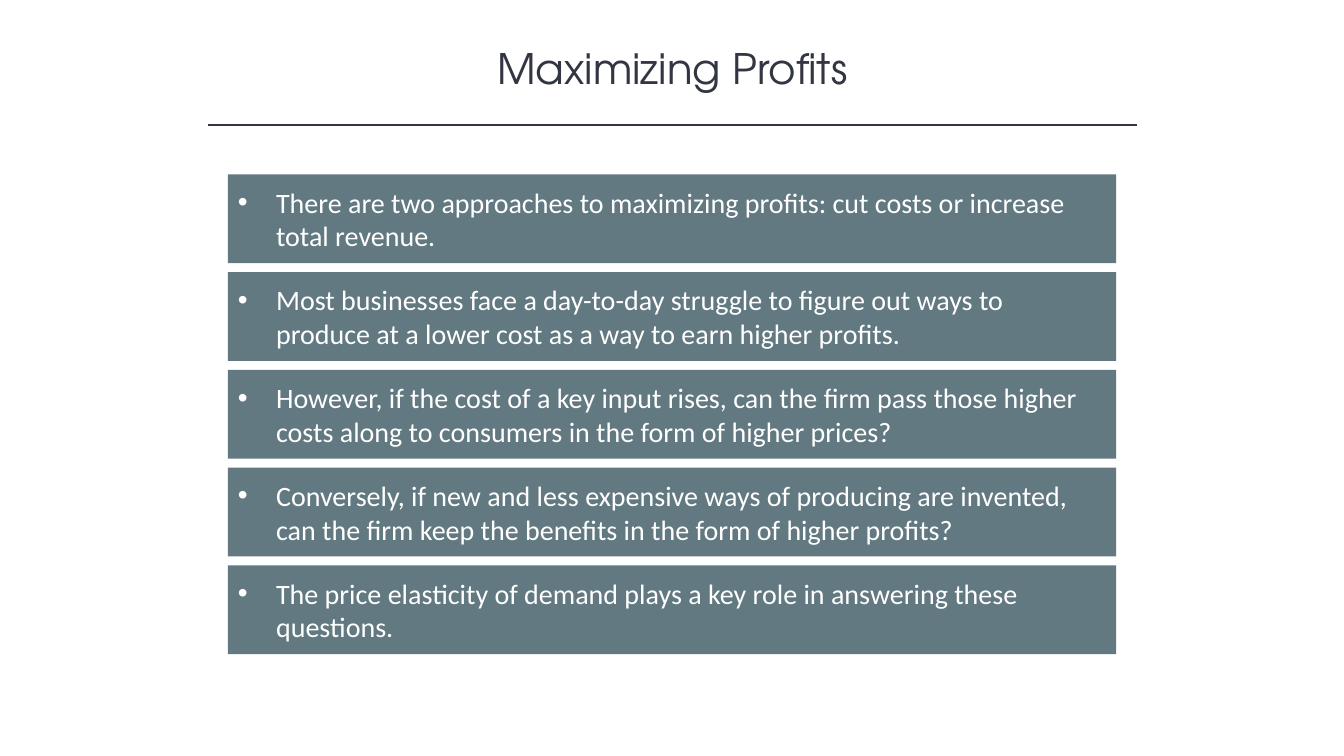
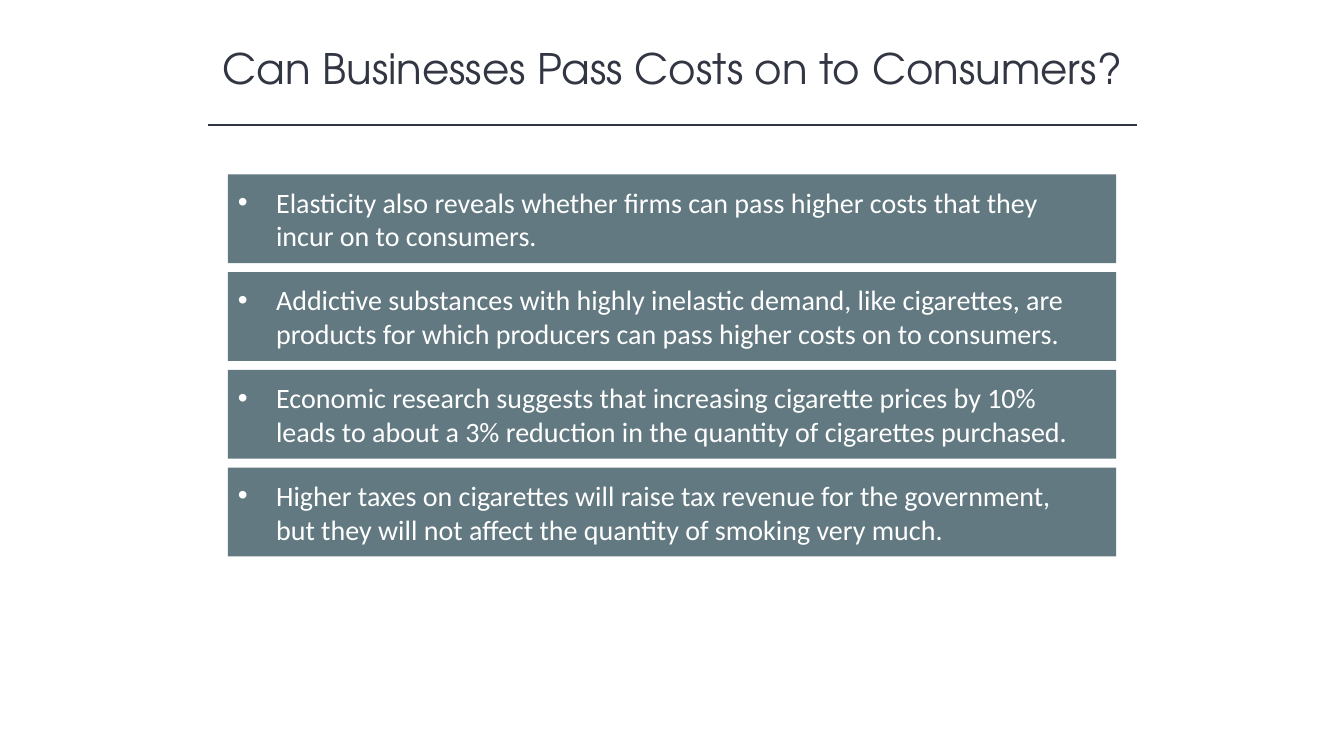
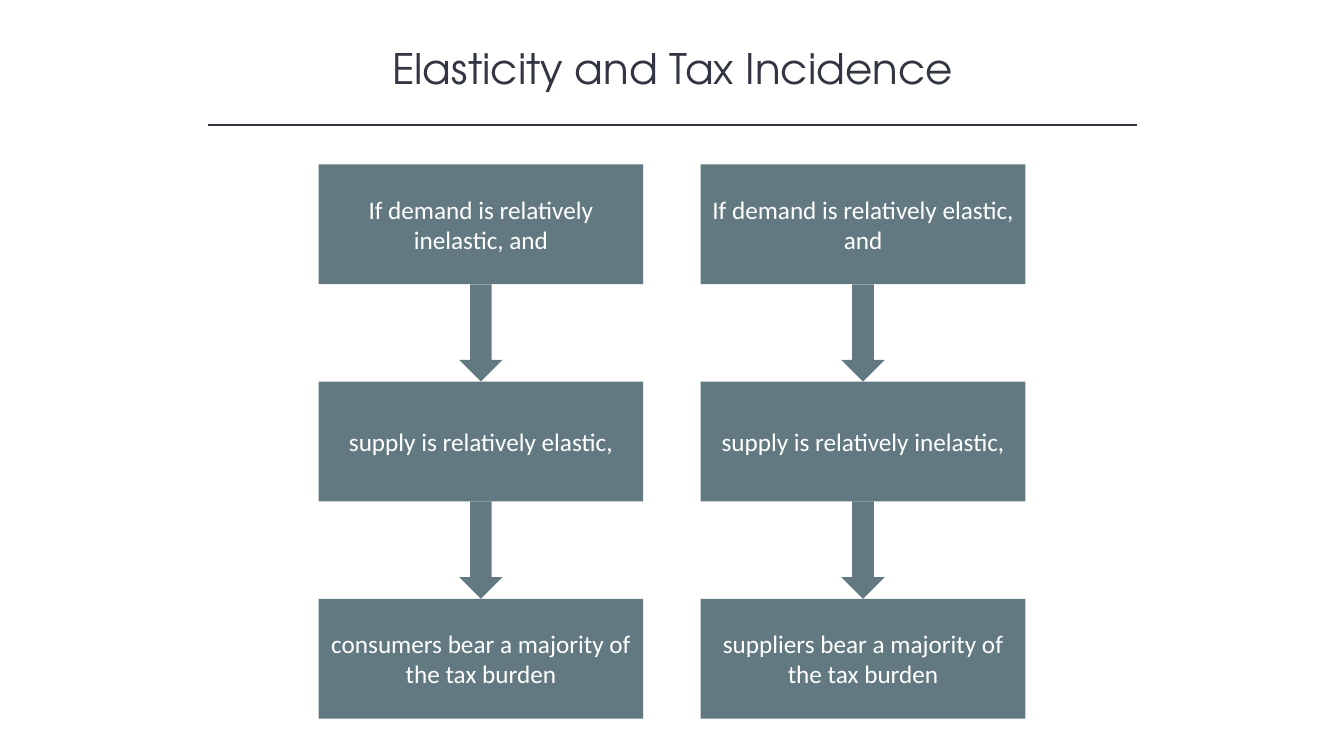
from lxml import etree
from pptx import Presentation
from pptx.dml.color import RGBColor
from pptx.enum.shapes import MSO_CONNECTOR, MSO_SHAPE
from pptx.enum.text import MSO_ANCHOR, MSO_AUTO_SIZE, PP_ALIGN
from pptx.oxml.ns import qn
from pptx.util import Inches, Pt

# Shared style
INK, SLATE, WHITE = "323542", "627981", "FFFFFF"
HEAD_FONT, BODY_FONT = "TeX Gyre Adventor", "Calibri"
SLIDE_W, SLIDE_H = 13.33, 7.5

# Bar list: one column, equal rows
BAR_X, BAR_Y, BAR_W, BAR_H, BAR_PITCH = 2.26, 1.73, 8.81, 0.88, 0.97
BULLET_INDENT = 0.38

# Flow grid: two columns, three rows
BOX_X, BOX_Y, BOX_W, BOX_H = 3.16, 1.63, 3.22, 1.19
COL_PITCH, ROW_PITCH = 3.79, 2.155
ARROW_W = 0.43

PROFITS = [
    "There are two approaches to maximizing profits: cut costs or increase total revenue.",
    "Most businesses face a day-to-day struggle to figure out ways to produce at a lower cost "
    "as a way to earn higher profits.",
    "However, if the cost of a key input rises, can the firm pass those higher costs along to "
    "consumers in the form of higher prices?",
    "Conversely, if new and less expensive ways of producing are invented, can the firm keep "
    "the benefits in the form of higher profits?",
    "The price elasticity of demand plays a key role in answering these questions.",
]
PASSING_COSTS = [
    "Elasticity also reveals whether firms can pass higher costs that they incur on to consumers.",
    "Addictive substances with highly inelastic demand, like cigarettes, are products for which "
    "producers can pass higher costs on to consumers.",
    "Economic research suggests that increasing cigarette prices by 10% leads to about a 3% "
    "reduction in the quantity of cigarettes purchased.",
    "Higher taxes on cigarettes will raise tax revenue for the government, but they will not "
    "affect the quantity of smoking very much.",
]
TAX_FLOWS = [
    ["If demand is relatively inelastic, and", "supply is relatively elastic,",
     "consumers bear a majority of the tax burden"],
    ["If demand is relatively elastic, and", "supply is relatively inelastic,",
     "suppliers bear a majority of the tax burden"],
]


def rgb(color):
    return RGBColor.from_string(color)


def add_bullet(p):
    pPr = p._p.get_or_add_pPr()
    pPr.set("marL", str(Inches(BULLET_INDENT)))
    pPr.set("indent", str(-Inches(BULLET_INDENT)))
    etree.SubElement(pPr, qn("a:buFont")).set("typeface", "Arial")
    etree.SubElement(pPr, qn("a:buChar")).set("char", "•")


def write(sp, text, size=18, font=BODY_FONT, color=WHITE, align=PP_ALIGN.CENTER,
          bullet=False, right=0.1):
    """Put one formatted paragraph in a shape, centred vertically."""
    tf = sp.text_frame
    tf.word_wrap = True
    tf.auto_size = MSO_AUTO_SIZE.NONE
    tf.vertical_anchor = MSO_ANCHOR.MIDDLE
    tf.margin_right = Inches(right)
    p = tf.paragraphs[0]
    if bullet:
        add_bullet(p)
    p.alignment = align
    r = p.add_run()
    r.text = text
    r.font.size, r.font.name = Pt(size), font
    r.font.color.rgb = rgb(color)


def add_block(s, x, y, w, h, kind=MSO_SHAPE.RECTANGLE):
    sp = s.shapes.add_shape(kind, Inches(x), Inches(y), Inches(w), Inches(h))
    sp.shadow.inherit = False
    sp.fill.solid()
    sp.fill.fore_color.rgb = rgb(SLATE)
    sp.line.fill.background()
    return sp


def add_rule(s, x1, x2, y):
    line = s.shapes.add_connector(MSO_CONNECTOR.STRAIGHT, Inches(x1), Inches(y),
                                  Inches(x2), Inches(y))
    line.line.color.rgb = rgb(INK)
    line.line.width = Pt(1)
    etree.SubElement(line._element.spPr, qn("a:effectLst"))


def new_slide(prs, title):
    """Title-only slide with the heading and the rule under it."""
    s = prs.slides.add_slide(prs.slide_layouts[5])
    sp = s.shapes.title
    sp.left, sp.top, sp.width, sp.height = (Inches(v) for v in (1.67, 0.37, 10, 0.61))
    write(sp, title, size=30, font=HEAD_FONT, color=INK)
    add_rule(s, 2.06, 11.28, 1.24)
    return s


def add_bars(s, items):
    for i, text in enumerate(items):
        sp = add_block(s, BAR_X, BAR_Y + i * BAR_PITCH, BAR_W, BAR_H)
        write(sp, text, size=20, align=PP_ALIGN.LEFT, bullet=True, right=0.37)


def add_flow(s, col, steps):
    """Boxes down one column, with an arrow filling each gap."""
    x = BOX_X + col * COL_PITCH
    for row, text in enumerate(steps):
        y = BOX_Y + row * ROW_PITCH
        write(add_block(s, x, y, BOX_W, BOX_H), text)
        if row < len(steps) - 1:
            add_block(s, x + (BOX_W - ARROW_W) / 2, y + BOX_H, ARROW_W,
                      ROW_PITCH - BOX_H, MSO_SHAPE.DOWN_ARROW)


def main():
    prs = Presentation()
    prs.slide_width, prs.slide_height = Inches(SLIDE_W), Inches(SLIDE_H)

    # Bar lists
    add_bars(new_slide(prs, "Maximizing Profits"), PROFITS)
    add_bars(new_slide(prs, "Can Businesses Pass Costs on to Consumers?"), PASSING_COSTS)

    # Flow columns
    s = new_slide(prs, "Elasticity and Tax Incidence")
    for col, steps in enumerate(TAX_FLOWS):
        add_flow(s, col, steps)

    prs.save("out.pptx")


if __name__ == "__main__":
    main()
